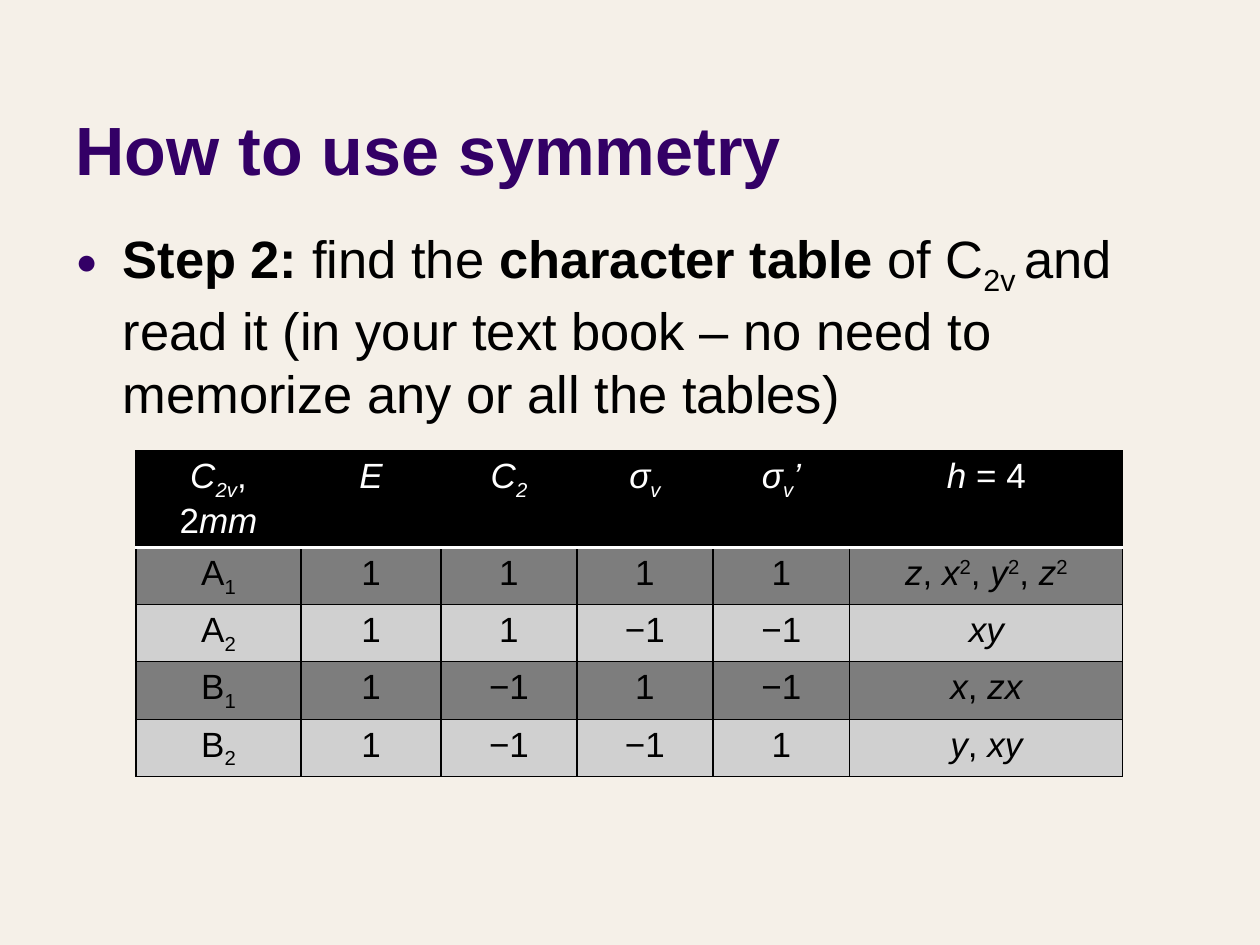
from lxml.etree import SubElement
from pptx import Presentation
from pptx.dml.color import RGBColor
from pptx.enum.text import MSO_ANCHOR, MSO_AUTO_SIZE, PP_ALIGN
from pptx.oxml.ns import qn
from pptx.util import Pt

PX = 914400 // 126
CREAM = RGBColor(0xF5, 0xF0, 0xE8)
PURPLE = RGBColor(0x33, 0x00, 0x66)
BLACK = RGBColor(0x00, 0x00, 0x00)
WHITE = RGBColor(0xFF, 0xFF, 0xFF)
DARK_GREY = RGBColor(0x7D, 0x7D, 0x7D)
LIGHT_GREY = RGBColor(0xD0, 0xD0, 0xD0)
BASELINES = {"_": "-25000", "^": "30000"}

TITLE = "How to use symmetry"
STEP = [
    ("Step 2: ", "b"), ("find the ", ""), ("character table ", "b"), ("of C", ""), ("2v ", "_"),
    ("and read it (in your text book – no need to memorize any or all the tables)", ""),
]
HEADER = [
    [("C", "i"), ("2v", "i_"), (", 2", ""), ("mm", "i")],
    [("E", "i")],
    [("C", "i"), ("2", "i_")],
    [("σ", "i"), ("v", "i_")],
    [("σ", "i"), ("v", "i_"), ("’", "i")],
    [("h", "i"), (" = 4", "")],
]
SPECIES = [
    ("A", "1", ["1", "1", "1", "1"],
     [("z", "i"), (", ", ""), ("x", "i"), ("2", "^"), (", ", ""),
      ("y", "i"), ("2", "^"), (", ", ""), ("z", "i"), ("2", "^")]),
    ("A", "2", ["1", "1", "−1", "−1"], [("xy", "i")]),
    ("B", "1", ["1", "−1", "1", "−1"], [("x", "i"), (", ", ""), ("zx", "i")]),
    ("B", "2", ["1", "−1", "−1", "1"], [("y", "i"), (", ", ""), ("xy", "i")]),
]
COLUMN_WIDTHS = [165, 140, 136, 136, 137, 273]
HEADER_HEIGHT = 96
ROW_HEIGHT = 57


def place(shape, box):
    shape.left, shape.top, shape.width, shape.height = (value * PX for value in box)


def format_paragraph(paragraph, size, color):
    paragraph.font.name = "Arial"
    paragraph.font.size = Pt(size)
    paragraph.font.color.rgb = color


def add_runs(paragraph, runs):
    for text, style in runs:
        run = paragraph.add_run()
        run.text = text
        if "b" in style:
            run.font.bold = True
        if "i" in style:
            run.font.italic = True
        for mark, baseline in BASELINES.items():
            if mark in style:
                run._r.get_or_add_rPr().set("baseline", baseline)


def add_bullet(paragraph, indent):
    properties = paragraph._p.get_or_add_pPr()
    properties.set("marL", str(indent * PX))
    properties.set("indent", str(-indent * PX))
    color = SubElement(properties, qn("a:buClr"))
    SubElement(color, qn("a:srgbClr"), val=str(PURPLE))
    SubElement(properties, qn("a:buSzPct"), val="70000")
    SubElement(properties, qn("a:buFont"), typeface="Arial")
    SubElement(properties, qn("a:buChar"), char="●")


def add_border(cell, side, color, width):
    line = SubElement(cell._tc.get_or_add_tcPr(), qn(f"a:ln{side}"), w=str(Pt(width)))
    fill = SubElement(line, qn("a:solidFill"))
    SubElement(fill, qn("a:srgbClr"), val=str(color))


def fill_title(title, box):
    place(title, box)
    frame = title.text_frame
    frame.auto_size = MSO_AUTO_SIZE.NONE
    frame.vertical_anchor = MSO_ANCHOR.BOTTOM
    frame.text = TITLE
    paragraph = frame.paragraphs[0]
    paragraph.alignment = PP_ALIGN.LEFT
    format_paragraph(paragraph, 39, PURPLE)
    paragraph.font.bold = True


def fill_body(body, box):
    place(body, box)
    body.text_frame.auto_size = MSO_AUTO_SIZE.NONE
    paragraph = body.text_frame.paragraphs[0]
    add_bullet(paragraph, 47)
    format_paragraph(paragraph, 30, BLACK)
    add_runs(paragraph, STEP)


def format_cell(cell, runs, row):
    paragraph = cell.text_frame.paragraphs[0]
    paragraph.alignment = PP_ALIGN.CENTER
    format_paragraph(paragraph, 20, BLACK if row else WHITE)
    add_runs(paragraph, runs)
    header_edge = {0: "B", 1: "T"}.get(row)
    for side in "LRTB":
        if side == header_edge:
            add_border(cell, side, WHITE, 2)
        else:
            add_border(cell, side, BLACK, 0.75)
    cell.fill.solid()
    if row == 0:
        cell.fill.fore_color.rgb = BLACK
    else:
        cell.fill.fore_color.rgb = DARK_GREY if row % 2 else LIGHT_GREY


def add_character_table(slide, left, top):
    rows = [HEADER]
    for letter, index, characters, functions in SPECIES:
        values = [[(character, "")] for character in characters]
        rows.append([[(letter, ""), (index, "_")], *values, functions])
    heights = [HEADER_HEIGHT] + [ROW_HEIGHT] * len(SPECIES)
    box = (left, top, sum(COLUMN_WIDTHS), sum(heights))
    frame = slide.shapes.add_table(len(rows), len(COLUMN_WIDTHS), *(value * PX for value in box))
    table = frame.table
    for column, width in zip(table.columns, COLUMN_WIDTHS):
        column.width = width * PX
    for row, height in zip(table.rows, heights):
        row.height = height * PX
    for row_index, row in enumerate(rows):
        for column_index, runs in enumerate(row):
            format_cell(table.cell(row_index, column_index), runs, row_index)


def main():
    presentation = Presentation()
    presentation.slide_width = 1260 * PX
    presentation.slide_height = 945 * PX
    slide = presentation.slides.add_slide(presentation.slide_layouts[1])
    slide.background.fill.solid()
    slide.background.fill.fore_color.rgb = CREAM
    fill_title(slide.shapes.title, (63, 16, 1134, 179))
    fill_body(slide.placeholders[1], (63, 220, 1134, 607))
    add_character_table(slide, 136, 451)
    presentation.save("out.pptx")


if __name__ == "__main__":
    main()
